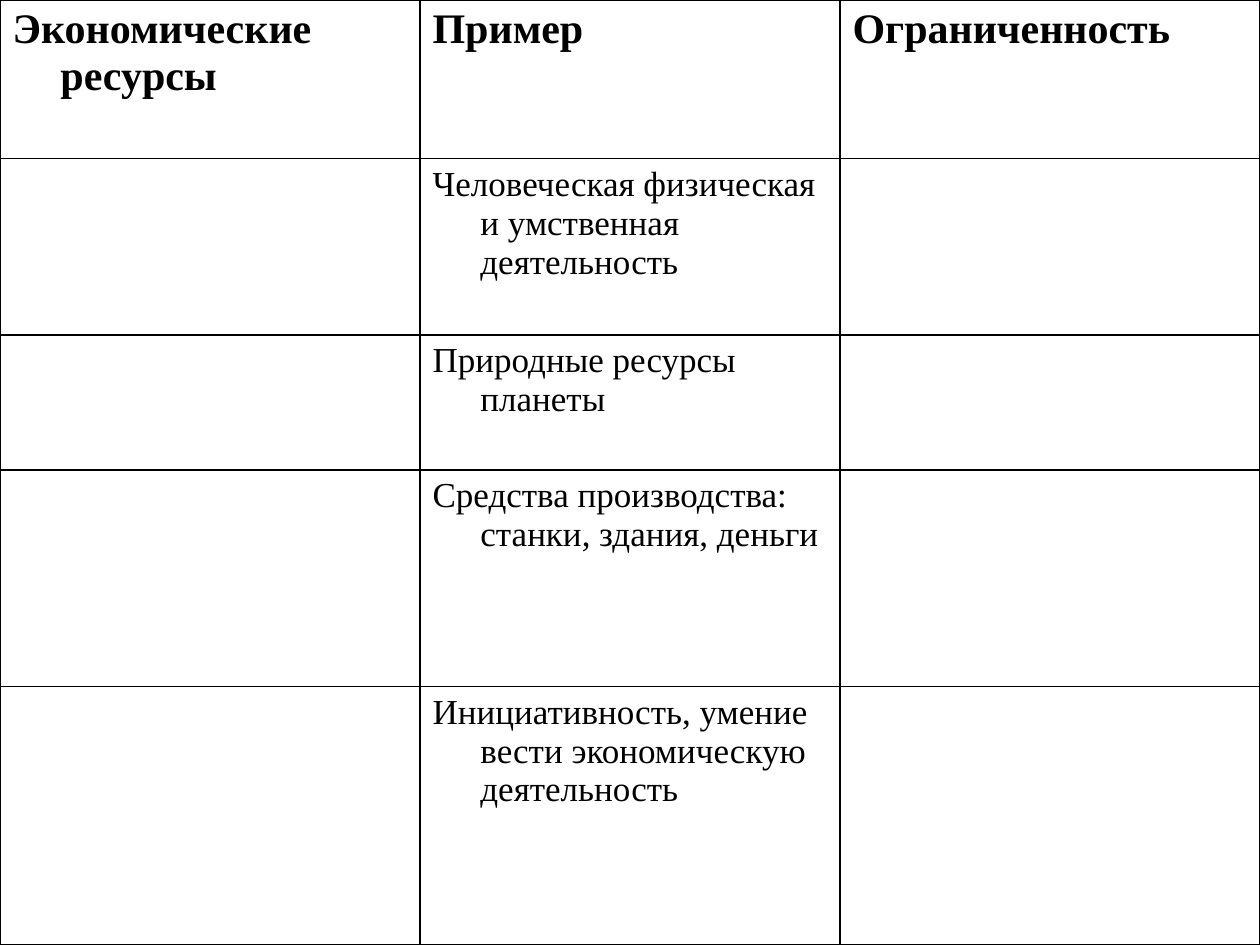
from dataclasses import dataclass

from lxml.etree import SubElement
from pptx import Presentation
from pptx.dml.color import RGBColor
from pptx.oxml.ns import qn
from pptx.table import _Cell as Cell
from pptx.util import Inches, Pt

COLORS = {"ink": "000000"}
FONT = "Times New Roman"
INDENT = Inches(0.38)
ROW_HEIGHTS = (1.26, 1.4, 1.07, 1.72, 2.05)


@dataclass(frozen=True)
class TextStyle:
    size: int
    bold: bool


@dataclass(frozen=True)
class Resource:
    name: str
    example: str
    scarcity: str


HEADER_STYLE = TextStyle(24, True)
BODY_STYLE = TextStyle(20, False)
HEADER = Resource("Экономические ресурсы", "Пример", "Ограниченность")
RESOURCES = [
    Resource("", example, "")
    for example in (
        "Человеческая физическая и умственная деятельность",
        "Природные ресурсы планеты",
        "Средства производства: станки, здания, деньги",
        "Инициативность, умение вести экономическую деятельность",
    )
]


def draw_borders(cell: Cell) -> None:
    properties = cell._tc.get_or_add_tcPr()
    for side in ("lnL", "lnR", "lnT", "lnB"):
        line = SubElement(properties, qn(f"a:{side}"), w=str(Pt(1)))
        fill = SubElement(line, qn("a:solidFill"))
        SubElement(fill, qn("a:srgbClr"), val=COLORS["ink"])


def write_text(cell: Cell, text: str, style: TextStyle) -> None:
    para = cell.text_frame.paragraphs[0]
    properties = para._p.get_or_add_pPr()
    properties.set("marL", str(INDENT))
    properties.set("indent", str(-INDENT))
    span = para.add_run()
    span.text = text
    span.font.name = FONT
    span.font.size = Pt(style.size)
    span.font.bold = style.bold
    span.font.color.rgb = RGBColor.from_string(COLORS["ink"])


def fill_row(cells: list[Cell], resource: Resource, style: TextStyle) -> None:
    texts = (resource.name, resource.example, resource.scarcity)
    for cell, text in zip(cells, texts):
        draw_borders(cell)
        cell.fill.background()
        if text:
            write_text(cell, text, style)


def main() -> None:
    deck = Presentation()
    deck.slide_width, deck.slide_height = Inches(10), Inches(7.5)
    page = deck.slides.add_slide(deck.slide_layouts[6])
    table = page.shapes.add_table(
        len(ROW_HEIGHTS), 3, 0, 0, deck.slide_width, deck.slide_height
    ).table
    table.first_row = False
    table.horz_banding = False
    for row, height in zip(table.rows, ROW_HEIGHTS):
        row.height = Inches(height)
    for index, resource in enumerate([HEADER, *RESOURCES]):
        style = BODY_STYLE if index else HEADER_STYLE
        fill_row(list(table.rows[index].cells), resource, style)
    deck.save("out.pptx")


if __name__ == "__main__":
    main()
